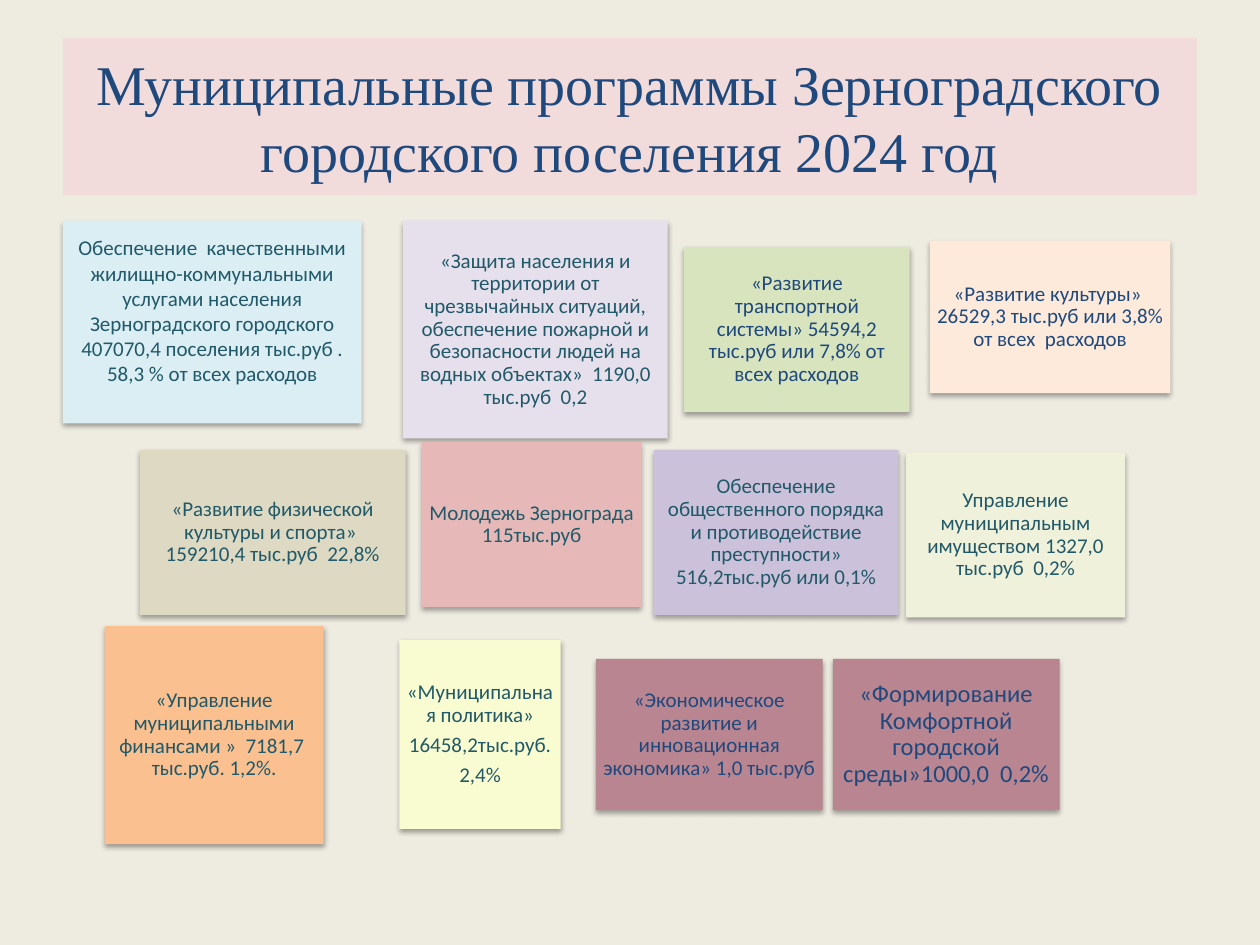
from collections import namedtuple

from lxml.etree import SubElement
from pptx import Presentation
from pptx.dml.color import RGBColor
from pptx.enum.shapes import MSO_SHAPE
from pptx.enum.text import MSO_ANCHOR, PP_ALIGN
from pptx.oxml.ns import qn
from pptx.util import Inches, Pt

COLUMNS, ROWS = 100, 75
WIDTH, HEIGHT = Inches(10), Inches(7.5)
COLORS = {
    "background": "EEECE1", "heading": "F2DCDB", "navy": "1F497D", "teal": "215968",
    "ice": "DBEEF4", "lilac": "E6E0EC", "green": "D7E4BD", "peach": "FDEADA",
    "sand": "DDD9C3", "rose": "E6B9B8", "violet": "CCC1DA", "olive": "EFF1DB",
    "orange": "FAC090", "lemon": "F9FCD0", "plum": "B98590", "shadow": "000000",
}
CARD_TEXT = {"line_spacing": 0.9, "space_after": Pt(4.2)}
CARD_FRAME = dict.fromkeys(
    ("margin_left", "margin_top", "margin_right", "margin_bottom"), Inches(0.05))

Box = namedtuple("Box", "left top width height")
Program = namedtuple("Program", "place fill ink lines size text frame",
                     defaults=(12, CARD_TEXT, CARD_FRAME))

HOUSING = Program(
    (0, 0, 23.7, 16.1), "ice", "teal",
    ["Обеспечение  качественными жилищно-коммунальными услугами населения Зерноградского "
     "городского 407070,4 поселения тыс.руб . 58,3 % от всех расходов"],
    text={"line_spacing": 1.0}, frame=CARD_FRAME | {"margin_bottom": Inches(0.23)})

PROGRAM_ROWS = [
    (Box(5, 17.5, 88, 17.3), [
        HOUSING,
        Program((27, 0, 21, 17.3), "lilac", "teal",
                ["«Защита населения и территории от чрезвычайных ситуаций, обеспечение пожарной "
                 "и безопасности людей на водных объектах»  1190,0 тыс.руб  0,2"]),
        Program((49.3, 2.1, 17.9, 13.1), "green", "navy",
                ["«Развитие транспортной системы» 54594,2 тыс.руб или 7,8% от всех расходов"]),
        Program((68.8, 1.6, 19.1, 12.1), "peach", "navy",
                ["«Развитие культуры»  26529,3 тыс.руб или 3,8% от всех  расходов"]),
    ]),
    (Box(11.1, 35.1, 78.2, 13.9), [
        Program((0, 0.6, 21.1, 13.1), "sand", "teal",
                ["«Развитие физической культуры и спорта»  159210,4 тыс.руб  22,8%"]),
        Program((22.4, 0, 17.4, 13.1), "rose", "teal",
                ["Молодежь Зернограда 115тыс.руб"]),
        Program((40.8, 0.6, 19.4, 13.1), "violet", "teal",
                ["Обеспечение общественного порядка и противодействие преступности» "
                 "516,2тыс.руб или 0,1%"]),
        Program((60.8, 0.8, 17.4, 13.1), "olive", "teal",
                ["Управление муниципальным имуществом 1327,0 тыс.руб  0,2%"]),
    ]),
    (Box(8.3, 49.7, 75.8, 17.3), [
        Program((0, 0, 17.4, 17.3), "orange", "teal",
                ["«Управление муниципальными финансами »  7181,7  тыс.руб. 1,2%."]),
        Program((23.4, 1.1, 12.8, 15), "lemon", "teal",
                ["«Муниципальная политика»", "16458,2тыс.руб.", "2,4%"]),
        Program((39, 2.6, 18, 12), "plum", "navy",
                ["«Экономическое развитие и инновационная экономика» 1,0 тыс.руб"]),
        Program((57.8, 2.6, 18, 12), "plum", "navy",
                ["«Формирование Комфортной городской среды»1000,0  0,2%"], size=14,
                frame=dict.fromkeys(CARD_FRAME, Inches(0.06))),
    ]),
]


def color(name):
    return RGBColor.from_string(COLORS[name])


def apply(target, values):
    for attribute, value in values.items():
        setattr(target, attribute, value)


def add_panel(slide, box, fill, lines, font, ink, text, frame):
    panel = slide.shapes.add_shape(
        MSO_SHAPE.RECTANGLE,
        int(WIDTH * box.left / COLUMNS), int(HEIGHT * box.top / ROWS),
        int(WIDTH * box.width / COLUMNS), int(HEIGHT * box.height / ROWS))
    panel.shadow.inherit = False
    panel.fill.solid()
    panel.fill.fore_color.rgb = color(fill)
    panel.line.fill.background()
    body = panel.text_frame
    apply(body, {"word_wrap": True, "vertical_anchor": MSO_ANCHOR.MIDDLE} | frame)
    for index, line in enumerate(lines):
        paragraph = body.add_paragraph() if index else body.paragraphs[0]
        apply(paragraph, {"alignment": PP_ALIGN.CENTER} | text)
        run = paragraph.add_run()
        run.text = line
        apply(run.font, font)
        run.font.color.rgb = color(ink)
    return panel


def add_shadow(panel):
    effects = panel._element.spPr.find(qn("a:effectLst"))
    shadow = SubElement(effects, qn("a:outerShdw"), blurRad=str(Pt(3.1)),
                        dist=str(Pt(1.8)), dir="5400000", rotWithShape="0")
    tint = SubElement(shadow, qn("a:srgbClr"), val=COLORS["shadow"])
    SubElement(tint, qn("a:alpha"), val="35000")


def add_heading(slide, box):
    add_panel(slide, box, "heading",
              ["Муниципальные программы Зерноградского городского поселения 2024 год"],
              {"name": "Times New Roman", "size": Pt(32)}, "navy", {}, {})


def add_program_row(slide, box, programs):
    for program in programs:
        left, top, width, height = program.place
        card = add_panel(slide, Box(box.left + left, box.top + top, width, height),
                         program.fill, program.lines,
                         {"name": "Calibri", "size": Pt(program.size)},
                         program.ink, program.text, program.frame)
        add_shadow(card)


def main():
    deck = Presentation()
    apply(deck, {"slide_width": WIDTH, "slide_height": HEIGHT})
    slide = deck.slides.add_slide(deck.slide_layouts[6])
    slide.background.fill.solid()
    slide.background.fill.fore_color.rgb = color("background")
    add_heading(slide, Box(5, 3, 90, 12.5))
    for box, programs in PROGRAM_ROWS:
        add_program_row(slide, box, programs)
    deck.save("out.pptx")


if __name__ == "__main__":
    main()
